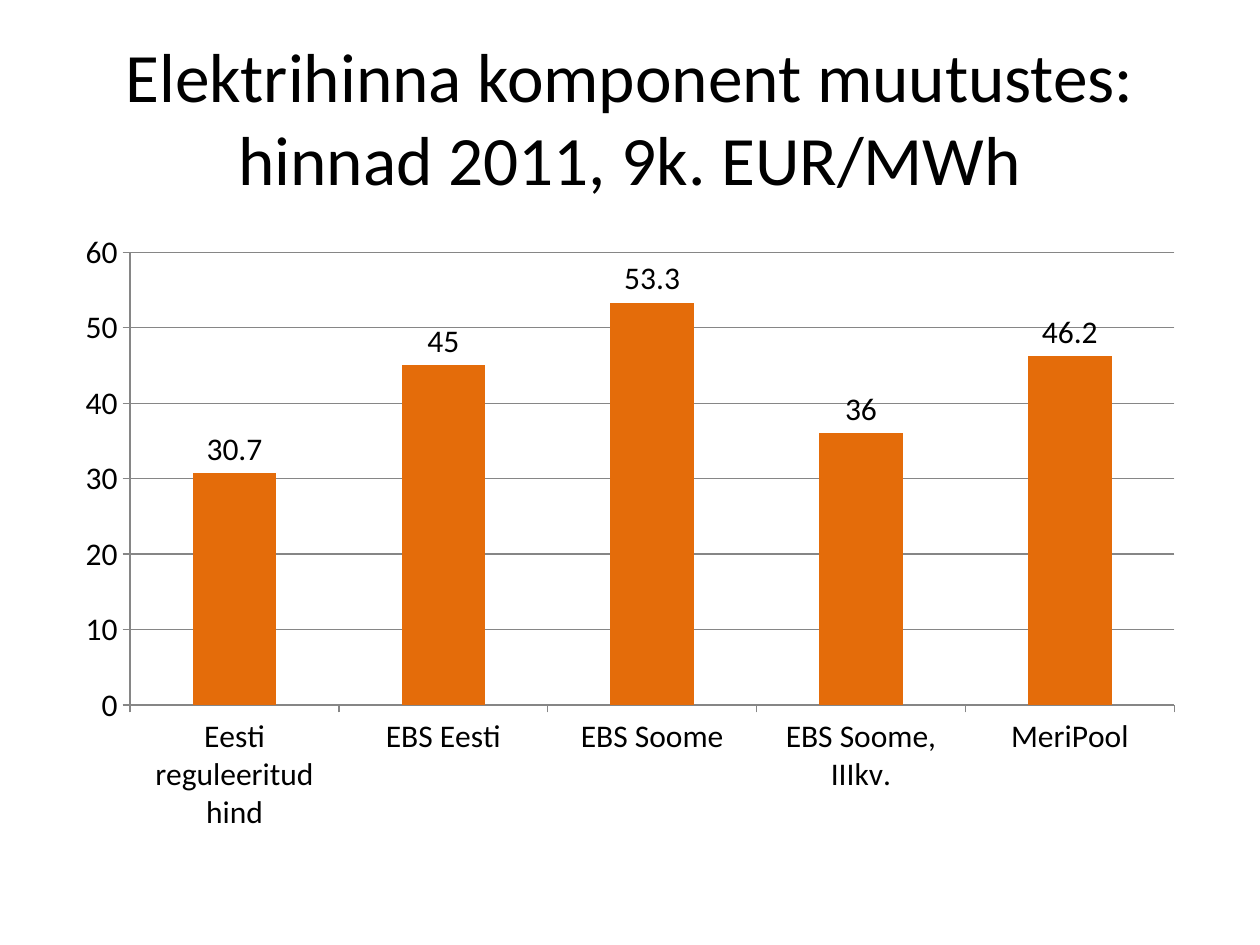
from pptx import Presentation
from pptx.chart.data import CategoryChartData
from pptx.dml.color import RGBColor
from pptx.enum.chart import XL_CHART_TYPE, XL_LABEL_POSITION, XL_TICK_MARK
from pptx.enum.text import MSO_ANCHOR, PP_ALIGN
from pptx.util import Cm, Pt

COLUMN = XL_CHART_TYPE.COLUMN_CLUSTERED
LABEL_ABOVE = XL_LABEL_POSITION.OUTSIDE_END
TICK_OUT, TICK_NONE = XL_TICK_MARK.OUTSIDE, XL_TICK_MARK.NONE
MIDDLE, CENTER = MSO_ANCHOR.MIDDLE, PP_ALIGN.CENTER

BLACK = RGBColor(0x00, 0x00, 0x00)
GREY = RGBColor(0x86, 0x86, 0x86)
ORANGE = RGBColor(0xE4, 0x6C, 0x0A)
FONT = "Calibri"
LEFT, WIDTH = Cm(1.27), Cm(22.86)

TITLE = "Elektrihinna komponent muutustes: hinnad 2011, 9k. EUR/MWh"
PRICES = {
    "Eesti reguleeritud hind": 30.7,
    "EBS Eesti": 45,
    "EBS Soome": 53.3,
    "EBS Soome, IIIkv.": 36,
    "MeriPool": 46.2,
}


def set_attrs(target, values):
    for name, value in values.items():
        setattr(target, name, value)


def set_font(font, size):
    set_attrs(font, {"name": FONT, "size": Pt(size)})
    font.color.rgb = BLACK


def set_line(line):
    line.color.rgb = GREY
    line.width = Pt(0.75)


def add_title(s, text):
    tf = s.shapes.add_textbox(LEFT, Cm(0.76), WIDTH, Cm(3.18)).text_frame
    set_attrs(tf, {"word_wrap": True, "vertical_anchor": MIDDLE})
    p = tf.paragraphs[0]
    p.alignment = CENTER
    r = p.add_run()
    r.text = text
    set_font(r.font, 39.6)


def add_price_chart(s, prices):
    data = CategoryChartData()
    data.categories = list(prices)
    data.add_series("Series 1", list(prices.values()))
    chart = s.shapes.add_chart(
        COLUMN, LEFT, Cm(4.45), WIDTH, Cm(12.57), data).chart
    set_attrs(chart, {"has_legend": False, "has_title": False})
    set_font(chart.font, 18)

    for axis in (chart.category_axis, chart.value_axis):
        set_attrs(axis, {"major_tick_mark": TICK_OUT,
                         "minor_tick_mark": TICK_NONE})
        set_line(axis.format.line)
    set_attrs(chart.value_axis, {"minimum_scale": 0, "maximum_scale": 60,
                                 "major_unit": 10,
                                 "has_major_gridlines": True})
    set_line(chart.value_axis.major_gridlines.format.line)

    plot = chart.plots[0]
    set_attrs(plot, {"gap_width": 150, "vary_by_categories": False,
                     "has_data_labels": True})
    set_attrs(plot.data_labels, {"show_value": True, "position": LABEL_ABOVE})
    set_font(plot.data_labels.font, 18)
    fill = plot.series[0].format.fill
    fill.solid()
    fill.fore_color.rgb = ORANGE


def main():
    """Build the electricity price slide."""
    prs = Presentation()
    set_attrs(prs, {"slide_width": Cm(25.4), "slide_height": Cm(19.05)})
    s = prs.slides.add_slide(prs.slide_layouts[6])
    add_title(s, TITLE)
    add_price_chart(s, PRICES)
    prs.save("out.pptx")


if __name__ == "__main__":
    main()
